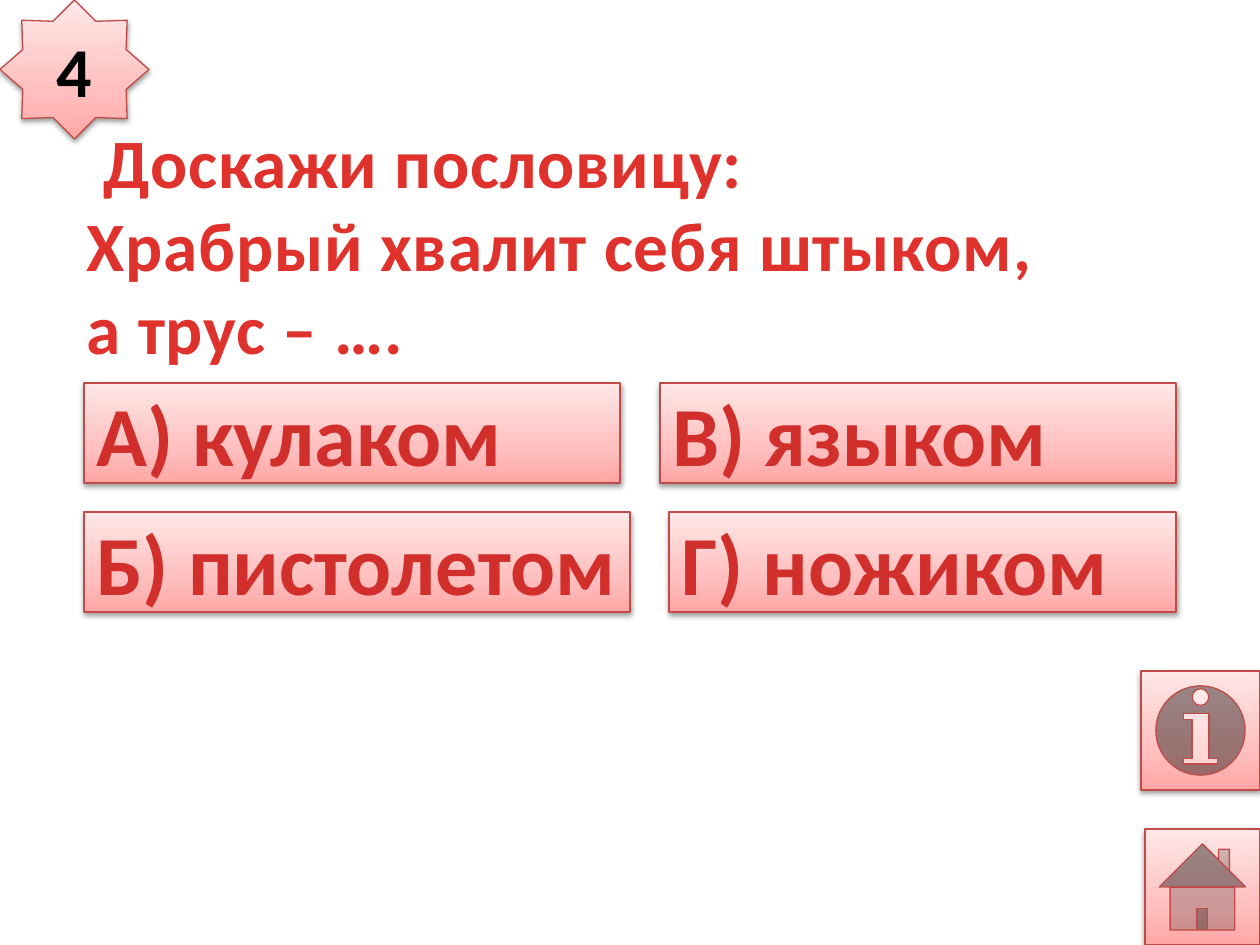
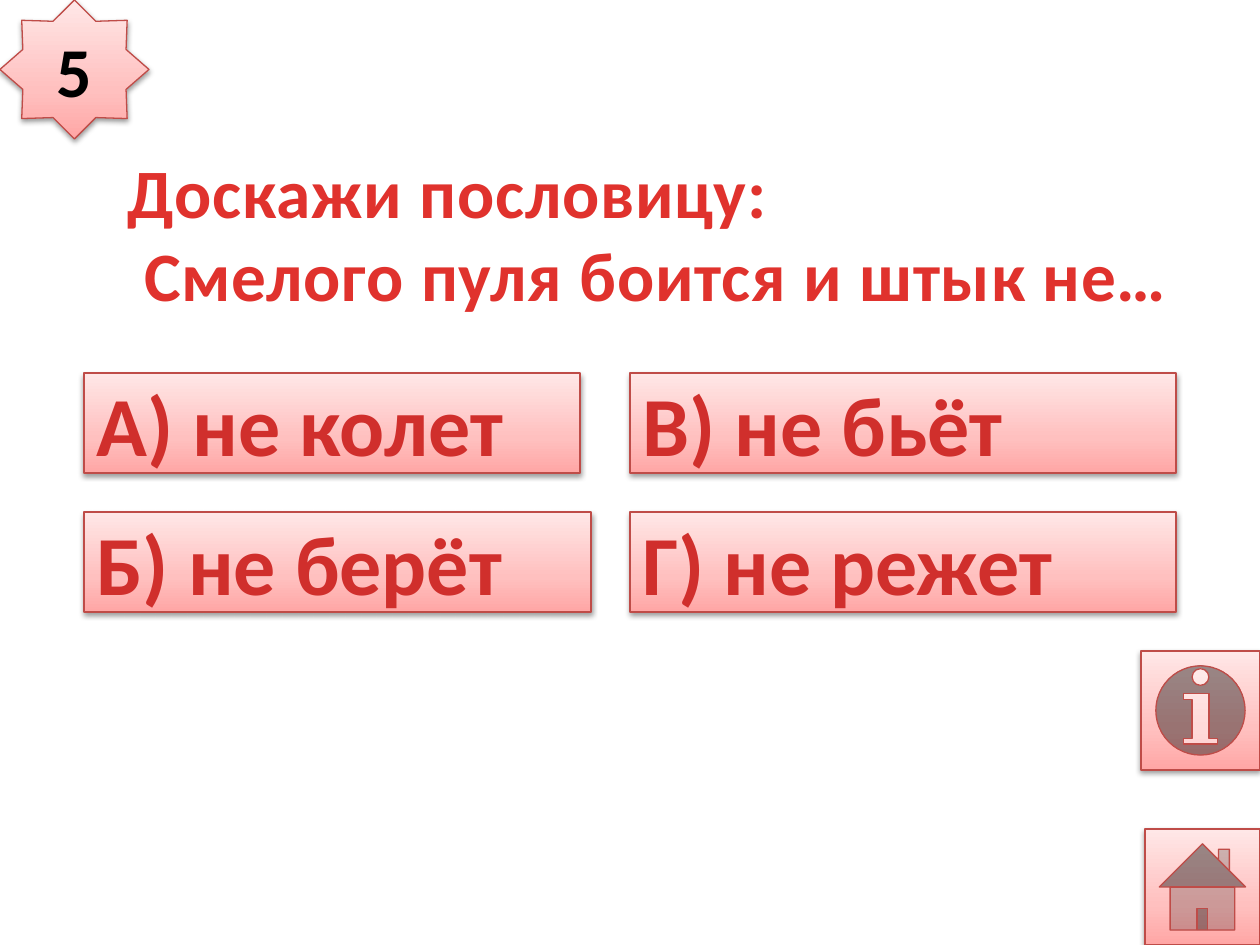
import lxml.etree
import pptx
import pptx.dml.color
import pptx.enum.shapes
import pptx.enum.text
import pptx.oxml.ns
import pptx.util

PIXELS_PER_INCH = 126
SLIDE_WIDTH, SLIDE_HEIGHT = 1260, 945
FONT = "Calibri"
TITLE_COLOR = "E0322D"
ANSWER_COLOR = "D02F2C"
NUMBER_COLOR = "000000"
LINE_COLOR = "BF4C48"
PANEL_STOPS = [(0, "FFA6A5"), (35, "FFC0BF"), (100, "FFE7E7")]
SHAPES = pptx.enum.shapes.MSO_SHAPE
ALIGN = pptx.enum.text.PP_ALIGN

ANSWER_LEFT, ANSWER_RIGHT, ANSWER_HEIGHT = 84, 1176, 100
STAR_BOX = (0, 0, 149, 139)
HOME_BOX = (1145, 829, 115, 116)
INFORMATION_SIZE = 119
TITLE_HEIGHT = 158

QUESTIONS = [
    {
        "number": "4",
        "title": " Доскажи пословицу:\vХрабрый хвалит себя штыком,\vа трус – ….",
        "title_corner": (74, 165),
        "rows": [
            (383, ("А) кулаком", 536), ("В) языком", 516)),
            (512, ("Б) пистолетом", 546), ("Г) ножиком", 507)),
        ],
        "information_top": 671,
    },
    {
        "number": "5",
        "title": "Доскажи пословицу:\v Смелого пуля боится и штык не…",
        "title_corner": (115, 153),
        "rows": [
            (373, ("А) не колет", 496), ("В) не бьёт", 546)),
            (512, ("Б) не берёт", 507), ("Г) не режет", 546)),
        ],
        "information_top": 651,
    },
]


def emu(pixels):
    return pptx.util.Emu(round(pixels * 914400 / PIXELS_PER_INCH))


def color(value):
    return pptx.dml.color.RGBColor.from_string(value)


def add_element(parent, tag, **attributes):
    element = lxml.etree.SubElement(parent, pptx.oxml.ns.qn(tag))
    for name, value in attributes.items():
        element.set(name, str(value))
    return element


def fill_gradient(shape):
    shape.fill.gradient()
    shape.fill.gradient_angle = 90
    stop_list = shape._element.spPr.find(".//" + pptx.oxml.ns.qn("a:gsLst"))
    for stop in list(stop_list):
        stop_list.remove(stop)
    for position, value in PANEL_STOPS:
        stop = add_element(stop_list, "a:gs", pos=position * 1000)
        add_element(stop, "a:srgbClr", val=value)


def add_shadow(shape):
    shape.shadow.inherit = False
    effects = shape._element.spPr.find(pptx.oxml.ns.qn("a:effectLst"))
    shadow = add_element(effects, "a:outerShdw", blurRad=40000, dist=20000,
                         dir=5400000, rotWithShape=0)
    shadow_color = add_element(shadow, "a:srgbClr", val="000000")
    add_element(shadow_color, "a:alpha", val=38000)


def write_text(shape, text, size, text_color, align=ALIGN.LEFT, spacing=0):
    frame = shape.text_frame
    frame.text = text
    frame.word_wrap = True
    frame.auto_size = pptx.enum.text.MSO_AUTO_SIZE.NONE
    frame.vertical_anchor = pptx.enum.text.MSO_ANCHOR.MIDDLE
    paragraph = frame.paragraphs[0]
    paragraph.alignment = align
    for run in paragraph.runs:
        run.font.name = FONT
        run.font.size = pptx.util.Pt(size)
        run.font.bold = True
        run.font.color.rgb = color(text_color)
        if spacing:
            run.font._element.set("spc", str(spacing))


def add_panel(slide, kind, box):
    shape = slide.shapes.add_shape(kind, *map(emu, box))
    fill_gradient(shape)
    shape.line.color.rgb = color(LINE_COLOR)
    shape.line.width = pptx.util.Pt(0.75)
    add_shadow(shape)
    return shape


def place_title(slide, text, corner):
    left, top = corner
    title = slide.shapes.title
    title.left, title.top = emu(left), emu(top)
    title.width, title.height = emu(SLIDE_WIDTH - left), emu(TITLE_HEIGHT)
    write_text(title, text, 39.6, TITLE_COLOR, spacing=50)


def add_answer_row(slide, top, left_answer, right_answer):
    left_text, left_width = left_answer
    right_text, right_width = right_answer
    for text, left, width in [
        (left_text, ANSWER_LEFT, left_width),
        (right_text, ANSWER_RIGHT - right_width, right_width),
    ]:
        panel = add_panel(slide, SHAPES.RECTANGLE, (left, top, width, ANSWER_HEIGHT))
        write_text(panel, text, 48, ANSWER_COLOR)


def add_number_star(slide, number, box):
    star = add_panel(slide, SHAPES.STAR_8_POINT, box)
    write_text(star, number, 40, NUMBER_COLOR, align=ALIGN.CENTER)


def add_buttons(slide, information_top):
    add_panel(slide, SHAPES.ACTION_BUTTON_HOME, HOME_BOX)
    add_panel(slide, SHAPES.ACTION_BUTTON_INFORMATION,
              (SLIDE_WIDTH - INFORMATION_SIZE, information_top,
               INFORMATION_SIZE, INFORMATION_SIZE))


def add_question_slide(presentation, question):
    slide = presentation.slides.add_slide(presentation.slide_layouts[5])
    place_title(slide, question["title"], question["title_corner"])
    for row in question["rows"]:
        add_answer_row(slide, *row)
    add_number_star(slide, question["number"], STAR_BOX)
    add_buttons(slide, question["information_top"])


def main():
    presentation = pptx.Presentation()
    presentation.slide_width = emu(SLIDE_WIDTH)
    presentation.slide_height = emu(SLIDE_HEIGHT)
    for question in QUESTIONS:
        add_question_slide(presentation, question)
    presentation.save("out.pptx")


if __name__ == "__main__":
    main()
